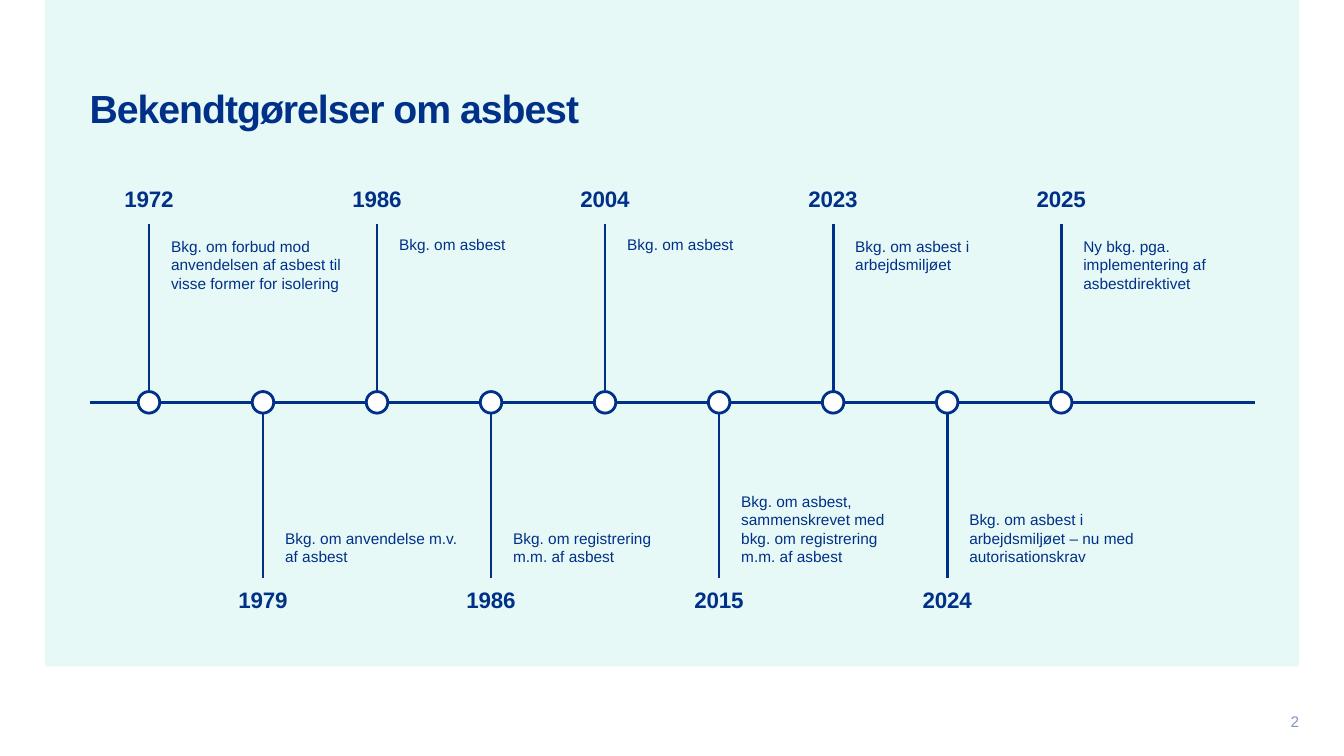
from pptx import Presentation
from pptx.dml.color import RGBColor
from pptx.enum import shapes, text
from pptx.oxml.ns import qn
from pptx.util import Pt

NAVY = RGBColor(0x00, 0x30, 0x87)
PALE_NAVY = RGBColor(0x80, 0x97, 0xC3)
MINT = RGBColor(0xE6, 0xF9, 0xF7)
WHITE = RGBColor(0xFF, 0xFF, 0xFF)

TITLE = "Bekendtgørelser om asbest"
PAGE_NUMBER = "2"
# Year, paragraphs, lines of room; the orders alternate above and below the axis.
ORDERS = [
    ("1972", ["Bkg. om forbud mod anvendelsen af asbest til", "visse former for isolering"], 5),
    ("1979", ["Bkg. om anvendelse m.v. af asbest"], 2),
    ("1986", ["Bkg. om asbest"], 1),
    ("1986", ["Bkg. om registrering m.m. af asbest"], 2),
    ("2004", ["Bkg. om asbest"], 1),
    ("2015", ["Bkg. om asbest, sammenskrevet med bkg. om registrering m.m. af asbest"], 4),
    ("2023", ["Bkg. om asbest i arbejdsmiljøet"], 2),
    ("2024", ["Bkg. om asbest i arbejdsmiljøet – nu med autorisationskrav"], 3),
    ("2025", ["Ny bkg. pga. implementering af asbestdirektivet"], 3),
]

AXIS_LEFT, AXIS_RIGHT, AXIS_Y = 64, 896.4, 287.4
FIRST_X, STEP = 106.4, 81.45
RADIUS = 7.7
STEM_TOP, STEM_BOTTOM = 159.8, 413
YEAR_WIDTH, YEAR_HEIGHT = 51, 33
NOTE_GAP, NOTE_WIDTH, NOTE_TOP, NOTE_BOTTOM = 7.9, 139, 161.3, 412
INSET, LINE_HEIGHT = 7.9, 13.3

TITLE_FONT = {"size": Pt(28), "bold": True}
YEAR_FONT = {"size": Pt(16), "bold": True}
NOTE_FONT = {"size": Pt(11)}
PAGE_FONT = {"size": Pt(11)}


def assign(target, values):
    for name, value in values.items():
        setattr(target, name, value)


def add_text(slide, box, paragraphs, font, color=NAVY, inset=0, tracking=0,
             frame_format=None, paragraph_format=None):
    """Add a text box; tracking is in hundredths of a point."""
    frame = slide.shapes.add_textbox(*map(Pt, box)).text_frame
    margins = ("margin_left", "margin_top", "margin_right", "margin_bottom")
    assign(frame, {"word_wrap": True, **dict.fromkeys(margins, Pt(inset)), **(frame_format or {})})
    for index, content in enumerate(paragraphs):
        paragraph = frame.add_paragraph() if index else frame.paragraphs[0]
        assign(paragraph, paragraph_format or {})
        run = paragraph.add_run()
        run.text = content
        assign(run.font, {"name": "Arial", **font})
        run.font.color.rgb = color
        if tracking:
            run.font._element.set("spc", str(tracking))


def add_line(slide, *ends):
    line = slide.shapes.add_connector(shapes.MSO_CONNECTOR.STRAIGHT, *map(Pt, ends))
    line.line.color.rgb = NAVY
    line.line.width = Pt(2)
    properties = line._element.spPr
    properties.append(properties.makeelement(qn("a:effectLst"), {}))


def add_filled(slide, kind, box, fill):
    shape = slide.shapes.add_shape(kind, *map(Pt, box))
    shape.shadow.inherit = False
    shape.fill.solid()
    shape.fill.fore_color.rgb = fill
    shape.line.fill.background()
    return shape


def add_order(slide, index, year, note, rows):
    x = FIRST_X + index * STEP
    above = index % 2 == 0
    note_height = 2 * INSET + rows * LINE_HEIGHT
    if above:
        stem = (STEM_TOP, AXIS_Y - RADIUS)
        year_top, note_top = STEM_TOP - YEAR_HEIGHT, NOTE_TOP
        anchor = text.MSO_ANCHOR.TOP
    else:
        stem = (AXIS_Y + RADIUS, STEM_BOTTOM)
        year_top, note_top = STEM_BOTTOM, NOTE_BOTTOM - note_height
        anchor = text.MSO_ANCHOR.BOTTOM
    grow = {"auto_size": text.MSO_AUTO_SIZE.SHAPE_TO_FIT_TEXT}

    add_text(slide, (x - YEAR_WIDTH / 2, year_top, YEAR_WIDTH, YEAR_HEIGHT), [year], YEAR_FONT,
             inset=INSET, tracking=-10, frame_format={**grow, "word_wrap": False},
             paragraph_format={"alignment": text.PP_ALIGN.CENTER, "line_spacing": 0.9})
    add_text(slide, (x + NOTE_GAP, note_top, NOTE_WIDTH, note_height), note, NOTE_FONT,
             inset=INSET, frame_format={**grow, "vertical_anchor": anchor})
    add_line(slide, x, stem[0], x, stem[1])
    marker = add_filled(slide, shapes.MSO_SHAPE.OVAL,
                        (x - RADIUS, AXIS_Y - RADIUS, 2 * RADIUS, 2 * RADIUS), WHITE)
    marker.line.color.rgb = NAVY
    marker.line.width = Pt(2)


def main():
    deck = Presentation()
    assign(deck, {"slide_width": Pt(960), "slide_height": Pt(540)})
    slide = deck.slides.add_slide(deck.slide_layouts[6])

    add_filled(slide, shapes.MSO_SHAPE.RECTANGLE, (32, 0, 896, 476), MINT)
    add_text(slide, (64, 64, 832, 32), [TITLE], TITLE_FONT, tracking=-70,
             paragraph_format={"line_spacing": 0.9})
    add_line(slide, AXIS_LEFT, AXIS_Y, AXIS_RIGHT, AXIS_Y)
    for index, order in enumerate(ORDERS):
        add_order(slide, index, *order)
    add_text(slide, (896, 510, 32, 10), [PAGE_NUMBER], PAGE_FONT, PALE_NAVY,
             frame_format={"vertical_anchor": text.MSO_ANCHOR.MIDDLE},
             paragraph_format={"alignment": text.PP_ALIGN.RIGHT})

    deck.save("out.pptx")


if __name__ == "__main__":
    main()
